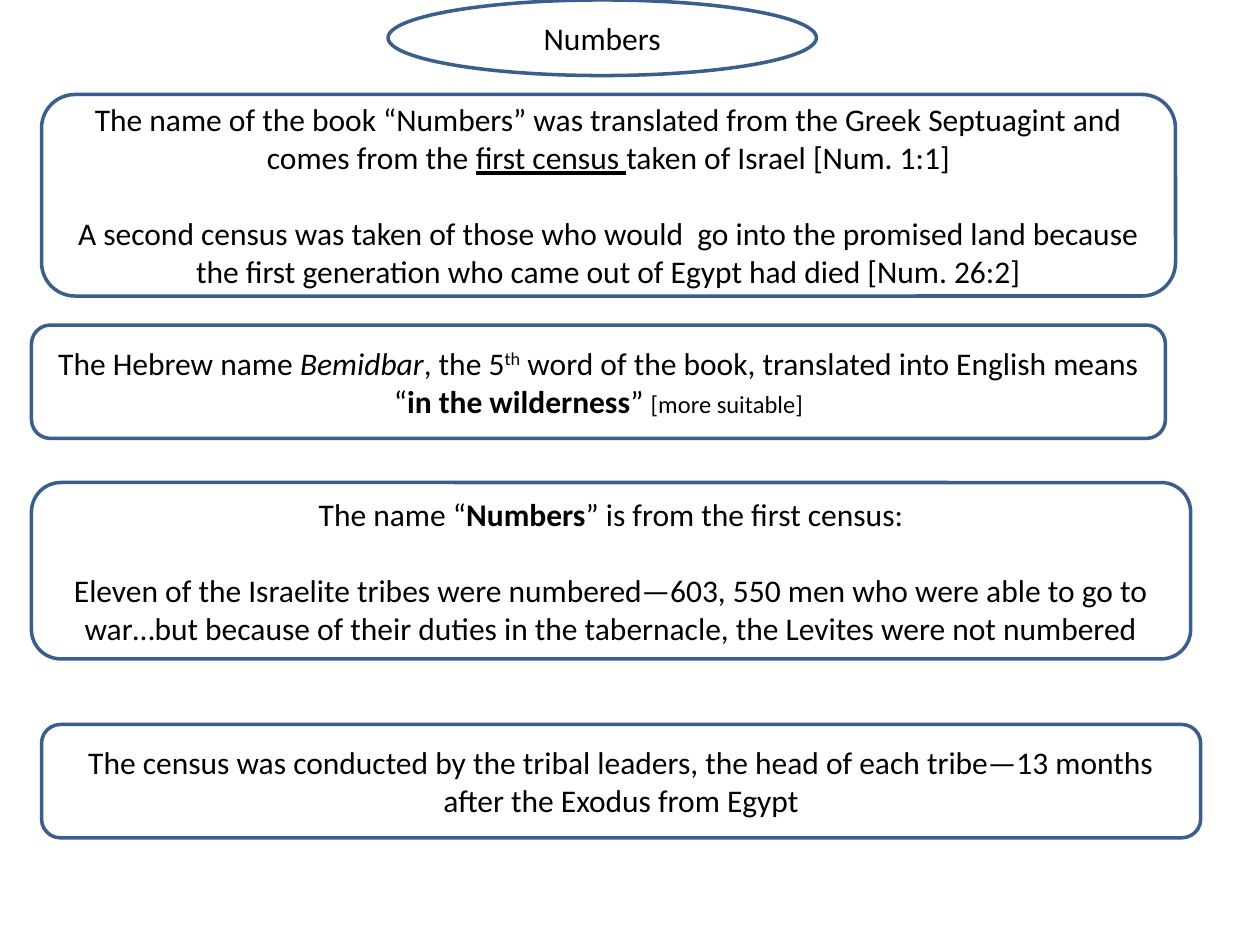
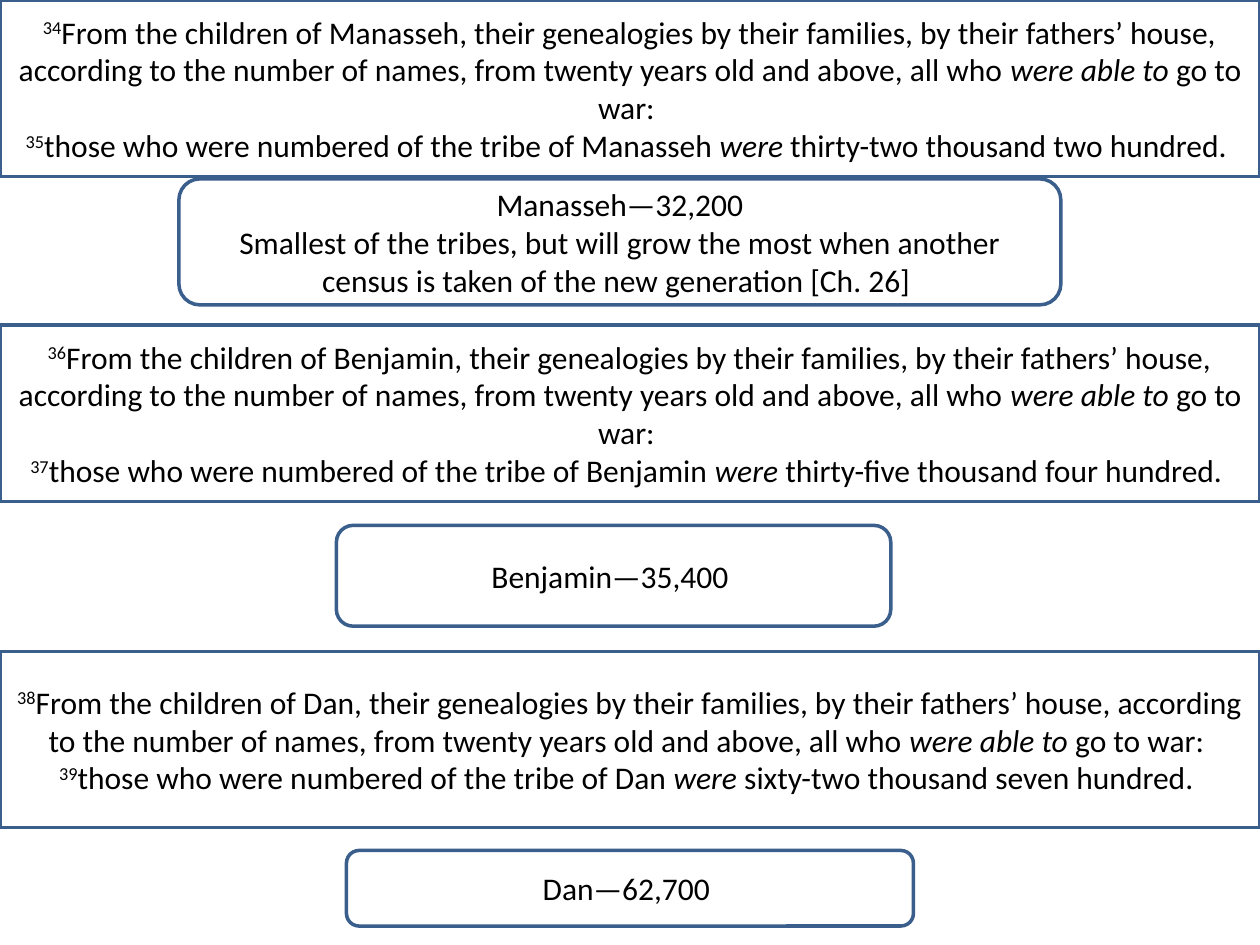
from dataclasses import dataclass

from pptx import Presentation
from pptx.dml.color import RGBColor
from pptx.enum import shapes, text
from pptx.util import Inches, Pt

INK = "000000"
PAPER = "FFFFFF"
BORDER = "3A5F8C"
FONT = "Calibri"
BODY_SIZE = 18
BLANK_LINE = 22

RECTANGLE = shapes.MSO_SHAPE.RECTANGLE
ROUNDED = shapes.MSO_SHAPE.ROUNDED_RECTANGLE
OVAL = shapes.MSO_SHAPE.OVAL


@dataclass(frozen=True)
class Span:
    words: str
    bold: bool = False
    italic: bool = False
    underline: bool = False
    raised: bool = False
    size: int = 0


@dataclass(frozen=True)
class Line:
    spans: tuple[Span, ...]
    space_before: int = 0


@dataclass(frozen=True)
class Box:
    left: float
    top: float
    width: float
    height: float
    lines: tuple[Line, ...]
    outline: shapes.MSO_SHAPE = ROUNDED


@dataclass(frozen=True)
class Tribe:
    name: str
    first_verse: int
    count_in_words: str
    summary: Box


def plain(words: str, space_before: int = 0) -> Line:
    return Line((Span(words),), space_before)


def colour(value: str) -> RGBColor:
    return RGBColor.from_string(value)


def add_span(paragraph, span: Span) -> None:
    for index, words in enumerate(span.words.split("\n")):
        if index:
            paragraph.add_line_break()
        if not words:
            continue
        run = paragraph.add_run()
        run.text = words
        if span.bold:
            run.font.bold = True
        if span.italic:
            run.font.italic = True
        if span.underline:
            run.font.underline = True
        if span.size:
            run.font.size = Pt(span.size)
        if span.raised:
            run.font._element.set("baseline", "30000")


def add_box(slide, box: Box) -> None:
    shape = slide.shapes.add_shape(
        box.outline, Inches(box.left), Inches(box.top), Inches(box.width), Inches(box.height)
    )
    shape.shadow.inherit = False
    shape.fill.solid()
    shape.fill.fore_color.rgb = colour(PAPER)
    shape.line.color.rgb = colour(BORDER)
    shape.line.width = Pt(2)
    frame = shape.text_frame
    frame.word_wrap = True
    frame.vertical_anchor = text.MSO_ANCHOR.MIDDLE
    for index, line in enumerate(box.lines):
        paragraph = frame.add_paragraph() if index else frame.paragraphs[0]
        paragraph.alignment = text.PP_ALIGN.CENTER
        paragraph.space_before = Pt(line.space_before)
        paragraph.font.name = FONT
        paragraph.font.size = Pt(BODY_SIZE)
        paragraph.font.color.rgb = colour(INK)
        for span in line.spans:
            add_span(paragraph, span)


def verse_box(tribe: Tribe, top: float) -> Box:
    passage = Line((
        Span(str(tribe.first_verse), raised=True),
        Span(
            f"From the children of {tribe.name}, their genealogies by their families, "
            "by their fathers’ house, according to the number of names, "
            "from twenty years old and above, all who "
        ),
        Span("were able to", italic=True),
        Span(" go to war: \n"),
        Span(str(tribe.first_verse + 1), raised=True),
        Span(f"those who were numbered of the tribe of {tribe.name} "),
        Span("were", italic=True),
        Span(f" {tribe.count_in_words}. "),
    ))
    return Box(0, top, 10, 1.4, (passage,), RECTANGLE)


NAME_BOXES = (
    Box(0.33, 0.75, 9, 1.6, (
        Line((
            Span(
                "The name of the book “Numbers” was translated from the Greek Septuagint "
                "and comes from the "
            ),
            Span("first census ", underline=True),
            Span("taken of Israel [Num. 1:1]"),
        )),
        plain(
            "A second census was taken of those who would  go into the promised land because "
            "the first generation who came out of Egypt had died [Num. 26:2]",
            BLANK_LINE,
        ),
    )),
    Box(0.25, 2.58, 9, 0.9, (
        Line((
            Span("The Hebrew name "),
            Span("Bemidbar", italic=True),
            Span(", the 5"),
            Span("th", raised=True),
            Span(" word of the book, translated into English means “"),
            Span("in the wilderness", bold=True),
            Span("” "),
            Span("[more suitable]", size=14),
        )),
    )),
    Box(0.25, 3.83, 9.2, 1.4, (
        Line((
            Span("The name “"),
            Span("Numbers", bold=True),
            Span("” is from the first census:"),
        )),
        plain(
            "Eleven of the Israelite tribes were numbered—603, 550 men who were able to go to "
            "war…but because of their duties in the tabernacle, the Levites were not numbered",
            BLANK_LINE,
        ),
    )),
    Box(0.33, 5.75, 9.2, 0.9, (
        plain(
            "The census was conducted by the tribal leaders, the head of each tribe—13 months "
            "after the Exodus from Egypt"
        ),
    )),
    Box(3.08, 0, 3.4, 0.6, (plain("Numbers"),), OVAL),
)

TRIBES = (
    Tribe("Manasseh", 34, "thirty-two thousand two hundred", Box(1.42, 1.42, 7, 1, (
        plain("Manasseh—32,200"),
        plain(
            "Smallest of the tribes, but will grow the most when another census is taken "
            "of the new generation [Ch. 26] "
        ),
    ))),
    Tribe("Benjamin", 36, "thirty-five thousand four hundred",
          Box(2.67, 4.17, 4.4, 0.8, (plain("Benjamin—35,400 "),))),
    Tribe("Dan", 38, "sixty-two thousand seven hundred",
          Box(2.75, 6.75, 4.5, 0.6, (plain("Dan—62,700 "),))),
)
VERSE_PITCH = 2.585


def main() -> None:
    presentation = Presentation()
    presentation.slide_width = Inches(10)
    presentation.slide_height = Inches(7.5)
    verse_boxes = [
        verse_box(tribe, round(index * VERSE_PITCH, 2)) for index, tribe in enumerate(TRIBES)
    ]
    summaries = [tribe.summary for tribe in TRIBES]
    for boxes in (NAME_BOXES, verse_boxes + summaries):
        slide = presentation.slides.add_slide(presentation.slide_layouts[6])
        for box in boxes:
            add_box(slide, box)
    presentation.save("out.pptx")


if __name__ == "__main__":
    main()
